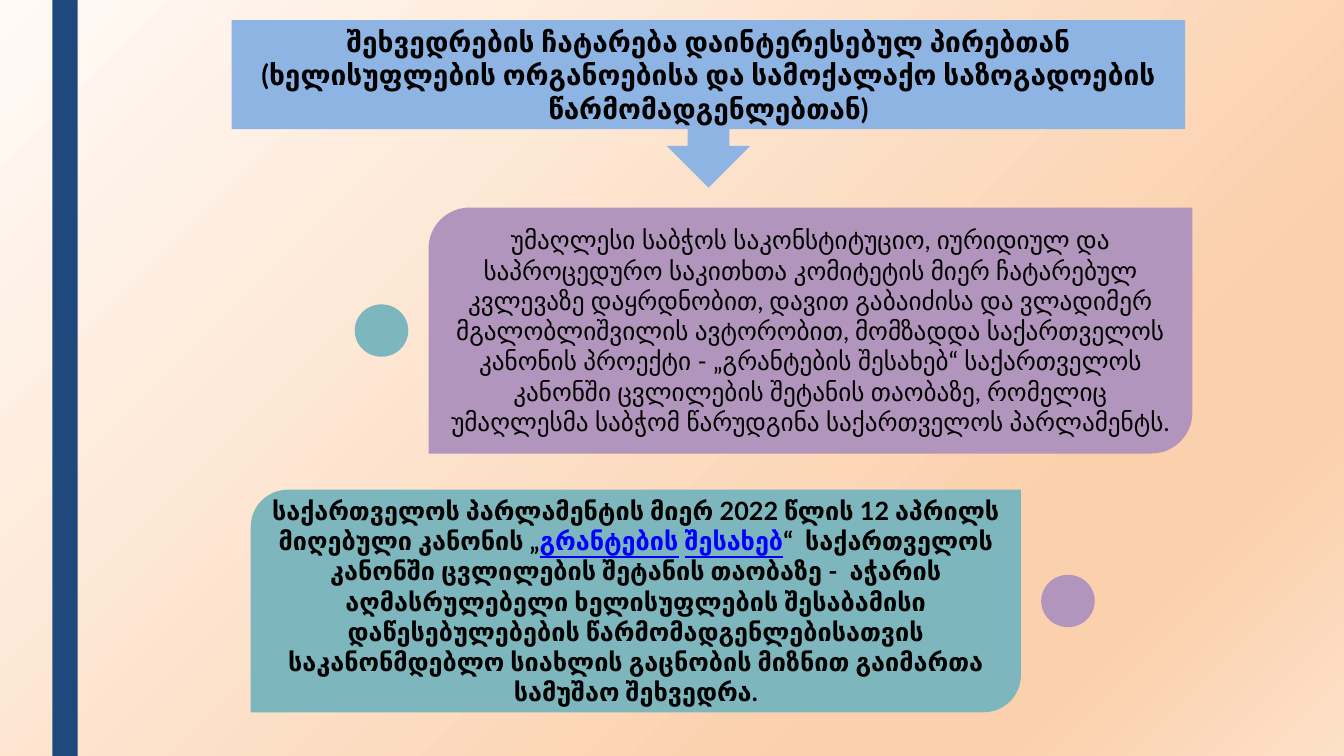
import copy

import pptx
import pptx.dml.color
import pptx.enum.shapes
import pptx.enum.text
import pptx.util

Cm = pptx.util.Cm
SHAPES = pptx.enum.shapes.MSO_SHAPE
FONT = "Lato"
COLORS = {
    "bar": "1F497D",
    "callout": "8EB4E3",
    "purple": "B295BD",
    "teal": "7DB7BD",
    "text": "000000",
    "link": "0000FF",
}
BACKGROUND_STOPS = [(0, "FFFAF6"), (74, "FBD0AC"), (83, "FBD0AC"), (100, "FDE0C7")]
DOT_W, DOT_H, DOT_GAP = 1.35, 1.32, 0.51
CALLOUT_BODY = 0.65  # share of the callout's height above its arrow

TITLE = ("შეხვედრების ჩატარება დაინტერესებულ პირებთან (ხელისუფლების ორგანოებისა "
         "და სამოქალაქო საზოგადოების წარმომადგენლებთან)")
BILL = [
    ("უმაღლესი საბჭოს საკონსტიტუციო, იურიდიულ და საპროცედურო საკითხთა "
     "კომიტეტის მიერ ჩატარებულ კვლევაზე დაყრდნობით, დავით გაბაიძისა და "
     "ვლადიმერ მგალობლიშვილის ავტორობით, მომზადდა საქართველოს კანონის "
     "პროექტი - „გრანტების შესახებ“ საქართველოს კანონში ცვლილების შეტანის "
     "თაობაზე, რომელიც უმაღლესმა საბჭომ წარუდგინა საქართველოს პარლამენტს.", False),
]
MEETING = [
    ("საქართველოს პარლამენტის მიერ 2022 წლის 12 აპრილს მიღებული კანონის „", False),
    ("გრანტების", True),
    (" ", False),
    ("შესახებ", True),
    ("“  საქართველოს კანონში ცვლილების შეტანის თაობაზე -  აჭარის "
     "აღმასრულებელი ხელისუფლების შესაბამისი დაწესებულებების "
     "წარმომადგენლებისათვის საკანონმდებლო სიახლის გაცნობის მიზნით "
     "გაიმართა სამუშაო შეხვედრა.", False),
]


def rgb(name):
    return pptx.dml.color.RGBColor.from_string(COLORS[name])


def paint_background(s):
    fill = s.background.fill
    fill.gradient()
    fill.gradient_angle = 315
    stop_list = s.element.xpath(".//p:bg//a:gsLst")[0]
    for _ in BACKGROUND_STOPS[2:]:
        stop_list.append(copy.deepcopy(stop_list[0]))
    for stop, (position, color) in zip(fill.gradient_stops, BACKGROUND_STOPS):
        stop.position = position / 100
        stop.color.rgb = pptx.dml.color.RGBColor.from_string(color)


def add_filled(s, kind, box, color):
    sp = s.shapes.add_shape(kind, *map(Cm, box))
    sp.shadow.inherit = False
    sp.fill.solid()
    sp.fill.fore_color.rgb = rgb(color)
    sp.line.fill.background()
    return sp


def write_text(sp, parts, size, bold):
    """Write centred (text, is_link) parts as one paragraph."""
    tf = sp.text_frame
    tf.word_wrap = True
    tf.auto_size = pptx.enum.text.MSO_AUTO_SIZE.NONE
    tf.vertical_anchor = pptx.enum.text.MSO_ANCHOR.MIDDLE
    p = tf.paragraphs[0]
    p.alignment = pptx.enum.text.PP_ALIGN.CENTER
    for text, is_link in parts:
        r = p.add_run()
        r.text = text
        r.font.name = FONT
        r.font.size = pptx.util.Pt(size)
        r.font.bold = bold
        r.font.underline = is_link
        r.font.color.rgb = rgb("link" if is_link else "text")


def add_title_callout(s, box):
    left, top, width, height = box
    add_filled(s, SHAPES.DOWN_ARROW_CALLOUT, box, "callout")
    title = s.shapes.title
    title.left, title.top = Cm(left), Cm(top)
    title.width, title.height = Cm(width), Cm(height * CALLOUT_BODY)
    write_text(title, [(TITLE, False)], 20, True)
    s.shapes.element.append(title.element)  # bring the title in front of the callout


def add_card(s, box, color, parts, bold, dot_color, dot_on_left):
    """Add a text card with a dot beside it, centred on its height."""
    left, top, width, height = box
    card = add_filled(s, SHAPES.ROUND_2_DIAG_RECTANGLE, box, color)
    write_text(card, parts, 18, bold)
    dot_left = left - DOT_GAP - DOT_W if dot_on_left else left + width + DOT_GAP
    dot_top = top + (height - DOT_H) / 2
    add_filled(s, SHAPES.OVAL, (dot_left, dot_top, DOT_W, DOT_H), dot_color)


def main():
    prs = pptx.Presentation()
    prs.slide_width, prs.slide_height = Cm(33.87), Cm(19.05)
    s = prs.slides.add_slide(prs.slide_layouts[5])
    paint_background(s)
    add_filled(s, SHAPES.RECTANGLE, (1.32, 0, 0.64, 19.05), "bar")
    add_title_callout(s, (5.84, 0.51, 24.03, 4.22))
    add_card(s, (10.8, 5.23, 19.25, 6.2), "purple", BILL, False, "teal", True)
    add_card(s, (6.32, 12.34, 19.41, 5.61), "teal", MEETING, True, "purple", False)
    prs.save("out.pptx")


if __name__ == "__main__":
    main()
